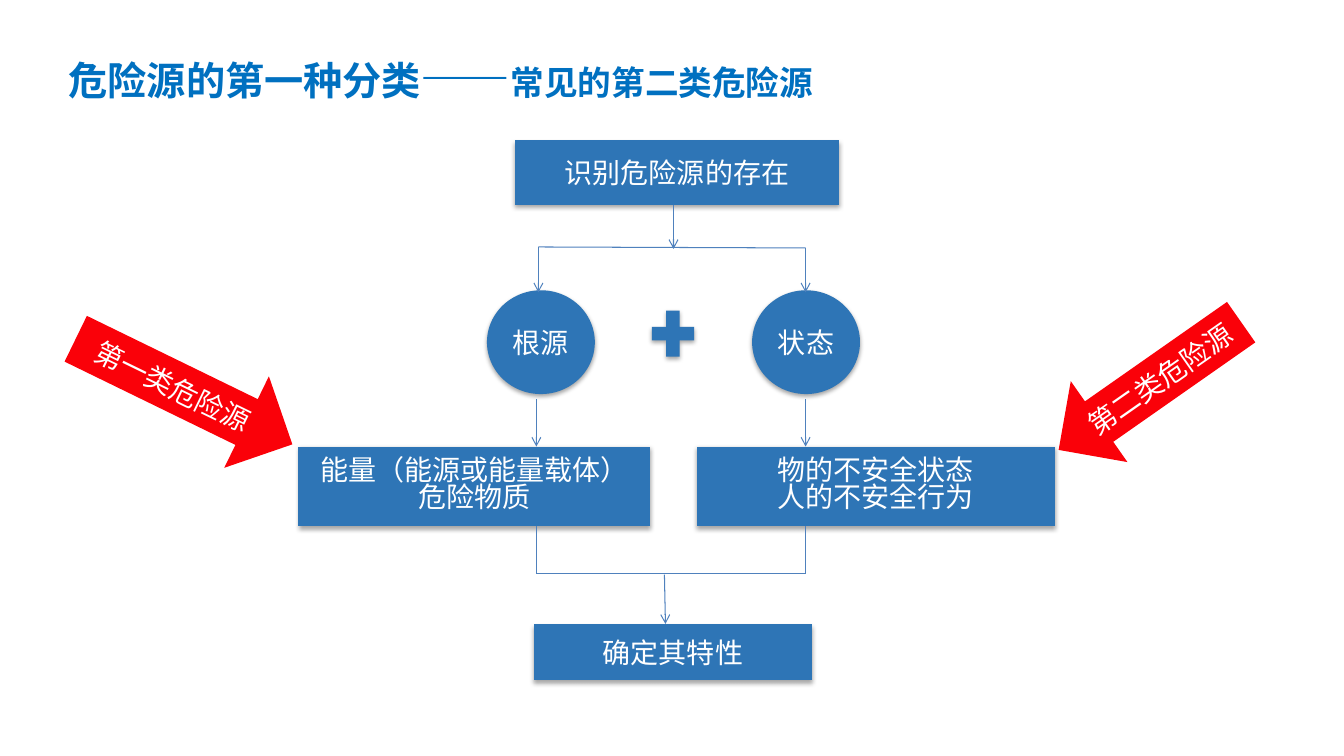
from lxml import etree
from pptx import Presentation
from pptx.dml.color import RGBColor
from pptx.enum.shapes import MSO_CONNECTOR, MSO_SHAPE
from pptx.enum.text import MSO_ANCHOR, PP_ALIGN
from pptx.oxml.ns import qn
from pptx.util import Inches, Pt

BOX = MSO_SHAPE.FLOWCHART_PROCESS
DISC = MSO_SHAPE.FLOWCHART_CONNECTOR
PLUS = MSO_SHAPE.MATH_PLUS
RIGHT = MSO_SHAPE.RIGHT_ARROW
LEFT = MSO_SHAPE.LEFT_ARROW
STRAIGHT = MSO_CONNECTOR.STRAIGHT
TOP, MIDDLE = MSO_ANCHOR.TOP, MSO_ANCHOR.MIDDLE
CENTER, START = PP_ALIGN.CENTER, PP_ALIGN.LEFT

FONT = "Noto Sans CJK SC"
BLUE, RED, WHITE = "2E75B6", "FA0109", "FFFFFF"
EDGE, HEAD = "4F81BD", "0070C0"

# Centre lines of the two branches and the stem
ROOT, STEM, STATE = 5.32, 6.68, 7.99


def paint(fmt, color):
    fmt.solid()
    fmt.fore_color.rgb = RGBColor.from_string(color)


def add_run(para, text, size=20, color=WHITE, bold=False):
    run = para.add_run()
    run.text = text
    font = run.font
    font.name, font.size, font.bold = FONT, Pt(size), bold
    font.color.rgb = RGBColor.from_string(color)
    # East Asian typeface
    etree.SubElement(font._element, qn("a:ea"), typeface=FONT)


def add_shade(shape):
    effects = shape._element.spPr.find(qn("a:effectLst"))
    shade = etree.SubElement(effects, qn("a:outerShdw"), blurRad="40000",
                             dist="23000", dir="5400000", rotWithShape="0")
    color = etree.SubElement(shade, qn("a:srgbClr"), val="000000")
    etree.SubElement(color, qn("a:alpha"), val="35000")


def add_node(slide, kind, area, lines=(), fill=BLUE, turn=0, space=None):
    shape = slide.shapes.add_shape(kind, *map(Inches, area))
    shape.rotation = turn
    shape.shadow.inherit = False
    paint(shape.fill, fill)
    shape.line.fill.background()
    frame = shape.text_frame
    frame.word_wrap = True
    frame.vertical_anchor = MIDDLE
    for i, text in enumerate(lines):
        para = frame.add_paragraph() if i else frame.paragraphs[0]
        para.alignment = CENTER
        para.line_spacing = space
        add_run(para, text)
    return shape


def add_link(slide, x1, y1, x2, y2, arrow=False):
    link = slide.shapes.add_connector(STRAIGHT, *map(Inches, (x1, y1, x2, y2)))
    paint(link.line.fill, EDGE)
    link.line.width = Pt(0.75)
    props = link._element.spPr
    etree.SubElement(props, qn("a:effectLst"))
    if arrow:
        etree.SubElement(props.find(qn("a:ln")), qn("a:tailEnd"), type="arrow")


def add_title(slide):
    title = slide.shapes.title
    title.left, title.top = Inches(0.58), Inches(0.51)
    title.width, title.height = Inches(11.5), Inches(0.62)
    frame = title.text_frame
    frame.word_wrap = True
    frame.vertical_anchor = TOP
    para = frame.paragraphs[0]
    para.alignment = START
    para.line_spacing = 0.9
    for text, size in (("危险源的第一种分类", 28), ("——", 32),
                       ("常见的第二类危险源", 24)):
        add_run(para, text, size=size, color=HEAD, bold=True)


def main():
    deck = Presentation()
    deck.slide_width, deck.slide_height = Inches(13.33), Inches(7.5)
    slide = deck.slides.add_slide(deck.slide_layouts[5])
    add_title(slide)

    # Flow steps
    for kind, area, lines, space in (
        (BOX, (5.11, 1.39, 3.21, 0.64), ["识别危险源的存在"], None),
        (BOX, (2.96, 4.43, 3.49, 0.79), ["能量（能源或能量载体）危险物质"], 0.8),
        (BOX, (6.91, 4.43, 3.55, 0.79),
         ["物的不安全状态", "人的不安全行为"], 0.8),
        (DISC, (4.83, 2.88, 1.07, 1.03), ["根源"], None),
        (DISC, (7.46, 2.88, 1.07, 1.03), ["状态"], None),
        (BOX, (5.3, 6.19, 2.75, 0.56), ["确定其特性"], None),
        (PLUS, (6.39, 3, 0.57, 0.62), [], None),
    ):
        add_shade(add_node(slide, kind, area, lines, space=space))

    # Split from the first step
    add_link(slide, STEM, 2.03, STEM, 2.47, arrow=True)
    add_link(slide, 5.34, 2.45, STATE, 2.46)
    add_link(slide, 5.34, 2.45, 5.34, 2.9, arrow=True)
    add_link(slide, STATE, 2.46, STATE, 2.9, arrow=True)

    # Both branches, then the join to the last step
    for x in (ROOT, STATE):
        add_link(slide, x, 3.96, x, 4.43, arrow=True)
        add_link(slide, x, 5.22, x, 5.69)
    add_link(slide, ROOT, 5.69, STATE, 5.69)
    add_link(slide, 6.59, 5.7, 6.6, 6.19, arrow=True)

    # Red class arrows
    add_node(slide, RIGHT, (0.63, 3.38, 2.39, 1.01), ["第一类危险源"],
             fill=RED, turn=26)
    add_node(slide, LEFT, (10.3, 3.34, 2.21, 0.98), ["第二类危险源"],
             fill=RED, turn=325)

    deck.save("out.pptx")


if __name__ == "__main__":
    main()
